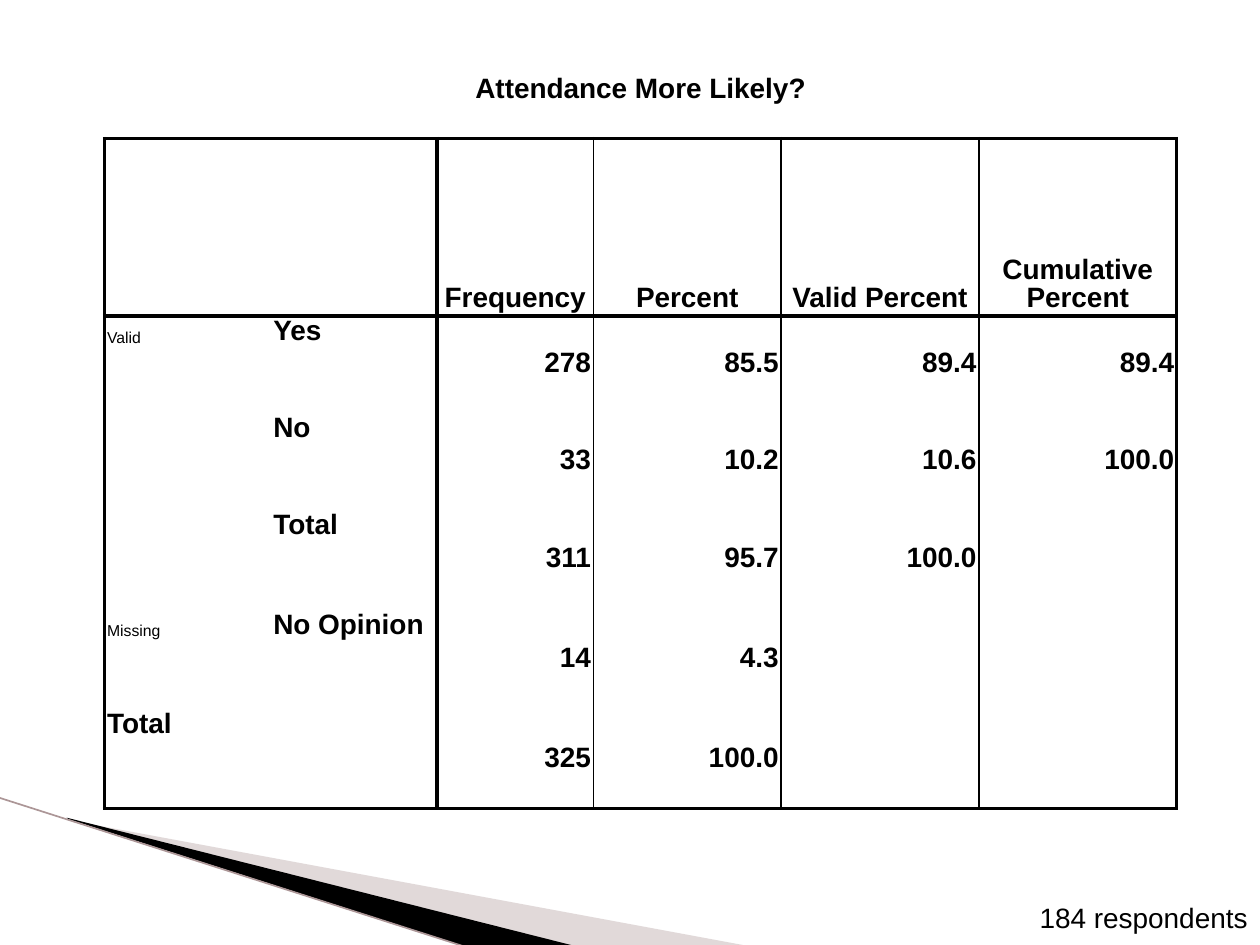
from pptx import Presentation
from pptx.dml.color import RGBColor
from pptx.enum.shapes import MSO_CONNECTOR
from pptx.enum.text import MSO_ANCHOR as Anchor, MSO_AUTO_SIZE, PP_ALIGN as Align
from pptx.oxml.ns import qn
from pptx.util import Inches, Pt
from lxml.etree import SubElement

BLACK, WHITE = "000000", "FFFFFF"
THICK, THIN = 2.25, 1
COLUMN_WIDTHS = [1.32, 1.32, 1.24, 1.49, 1.57, 1.57]
ROW_HEIGHTS = [0.77, 1.41, 0.77, 0.77, 0.79, 0.79, 0.79]
ROWS = [
    ["Attendance More Likely?", "", "", "", "", ""],
    ["", "", "Frequency", "Percent", "Valid Percent", "Cumulative Percent"],
    ["Valid", "Yes", "278", "85.5", "89.4", "89.4"],
    ["", "No", "33", "10.2", "10.6", "100.0"],
    ["", "Total", "311", "95.7", "100.0", ""],
    ["Missing", "No Opinion", "14", "4.3", "", ""],
    ["Total", "", "325", "100.0", "", ""],
]
GROUP_LABELS = ("Valid", "Missing")


def color(hex_code):
    return RGBColor.from_string(hex_code)


def format_run(run, size, bold=False):
    run.font.name = "Arial"
    run.font.size = Pt(size)
    run.font.bold = bold
    run.font.color.rgb = color(BLACK)


def add_wedge(slide, left, top, points, fill, opacity=100):
    """Draw a filled outline from points given relative to left, top."""
    corners = [(Inches(left + x), Inches(top + y)) for x, y in points]
    builder = slide.shapes.build_freeform(*corners[0])
    builder.add_line_segments(corners[1:], close=True)
    wedge = builder.convert_to_shape()
    wedge.shadow.inherit = False
    wedge.fill.solid()
    wedge.fill.fore_color.rgb = color(fill)
    wedge.line.fill.background()
    if opacity < 100:
        fill_color = wedge._element.spPr.find(qn("a:solidFill"))[0]
        SubElement(fill_color, qn("a:alpha"), val=str(opacity * 1000))


def add_corner_decoration(slide, left, top):
    add_wedge(slide, left, top, [(0.56, 0.18), (5.96, 1.18), (4.57, 1.18), (0.56, 0.17)],
              "B4A0A1", opacity=40)
    add_wedge(slide, left, top, [(0.54, 0.16), (4.58, 1.18), (3.73, 1.19), (0.55, 0.17)], BLACK)
    edge = slide.shapes.add_connector(MSO_CONNECTOR.STRAIGHT, Inches(left), Inches(top),
                                      Inches(left + 3.72), Inches(top + 1.19))
    edge.line.color.rgb = color("AC9697")
    edge.line.width = Pt(0.95)
    SubElement(edge._element.spPr, qn("a:effectLst"))


def add_respondents(slide, left, top, width, height):
    box = slide.shapes.add_textbox(Inches(left), Inches(top), Inches(width), Inches(height))
    frame = box.text_frame
    frame.word_wrap = True
    frame.auto_size = MSO_AUTO_SIZE.SHAPE_TO_FIT_TEXT
    frame.text = "184 respondents"
    frame.paragraphs[0].alignment = Align.RIGHT
    format_run(frame.paragraphs[0].runs[0], 16)


def cell_borders(row, column):
    """Return the line widths of a cell by side, None where there is no line."""
    left = right = None
    if row > 0:
        left = [THICK, None, THICK, THIN, THIN, THIN][column]
        right = [None, THICK, THIN, THIN, THIN, THICK][column]
    top = THICK if row in (1, 2) else None
    bottom = THICK if row in (0, 1, len(ROWS) - 1) else None
    return {"L": left, "R": right, "T": top, "B": bottom}


def set_borders(cell, borders):
    properties = cell._tc.get_or_add_tcPr()
    for side, width in borders.items():
        line = SubElement(properties, qn(f"a:ln{side}"), w=str(Pt(width or 0)))
        if width is None:
            SubElement(line, qn("a:noFill"))
        else:
            fill = SubElement(line, qn("a:solidFill"))
            SubElement(fill, qn("a:srgbClr"), val=BLACK)


def cell_layout(row, column):
    """Return the alignment and the vertical anchor of a cell."""
    if row == 0:
        return Align.CENTER, Anchor.MIDDLE
    if row == 1:
        return Align.CENTER, Anchor.BOTTOM
    if column < 2:
        return Align.LEFT, Anchor.TOP
    return Align.RIGHT, Anchor.MIDDLE


def fill_cell(cell, text, row, column):
    set_borders(cell, cell_borders(row, column))
    cell.fill.solid()
    cell.fill.fore_color.rgb = color(WHITE)
    if not text:
        return
    cell.margin_left = cell.margin_right = Inches(0.02)
    cell.margin_top = cell.margin_bottom = Inches(0.02)
    alignment, cell.vertical_anchor = cell_layout(row, column)
    cell.text_frame.text = text
    paragraph = cell.text_frame.paragraphs[0]
    paragraph.alignment = alignment
    paragraph.line_spacing = Pt(16)
    is_group = text in GROUP_LABELS
    format_run(paragraph.runs[0], 9 if is_group else 16, bold=not is_group)


def add_frequency_table(slide, left, top):
    table = slide.shapes.add_table(
        len(ROWS), len(COLUMN_WIDTHS), Inches(left), Inches(top),
        Inches(sum(COLUMN_WIDTHS)), Inches(sum(ROW_HEIGHTS))).table
    table.first_row = table.horz_banding = False
    for column, width in zip(table.columns, COLUMN_WIDTHS):
        column.width = Inches(width)
    for row, height in zip(table.rows, ROW_HEIGHTS):
        row.height = Inches(height)
    table.cell(0, 0).merge(table.cell(0, 5))
    table.cell(2, 0).merge(table.cell(4, 0))
    table.cell(6, 0).merge(table.cell(6, 1))
    for row, texts in enumerate(ROWS):
        for column, text in enumerate(texts):
            fill_cell(table.cell(row, column), text, row, column)


def main():
    presentation = Presentation()
    presentation.slide_width, presentation.slide_height = Inches(10), Inches(7.5)
    slide = presentation.slides.add_slide(presentation.slide_layouts[6])
    add_corner_decoration(slide, -0.01, 6.33)
    add_respondents(slide, 7.58, 7.1, 2.42, 0.37)
    add_frequency_table(slide, 0.83, 0.33)
    presentation.save("out.pptx")


if __name__ == "__main__":
    main()
